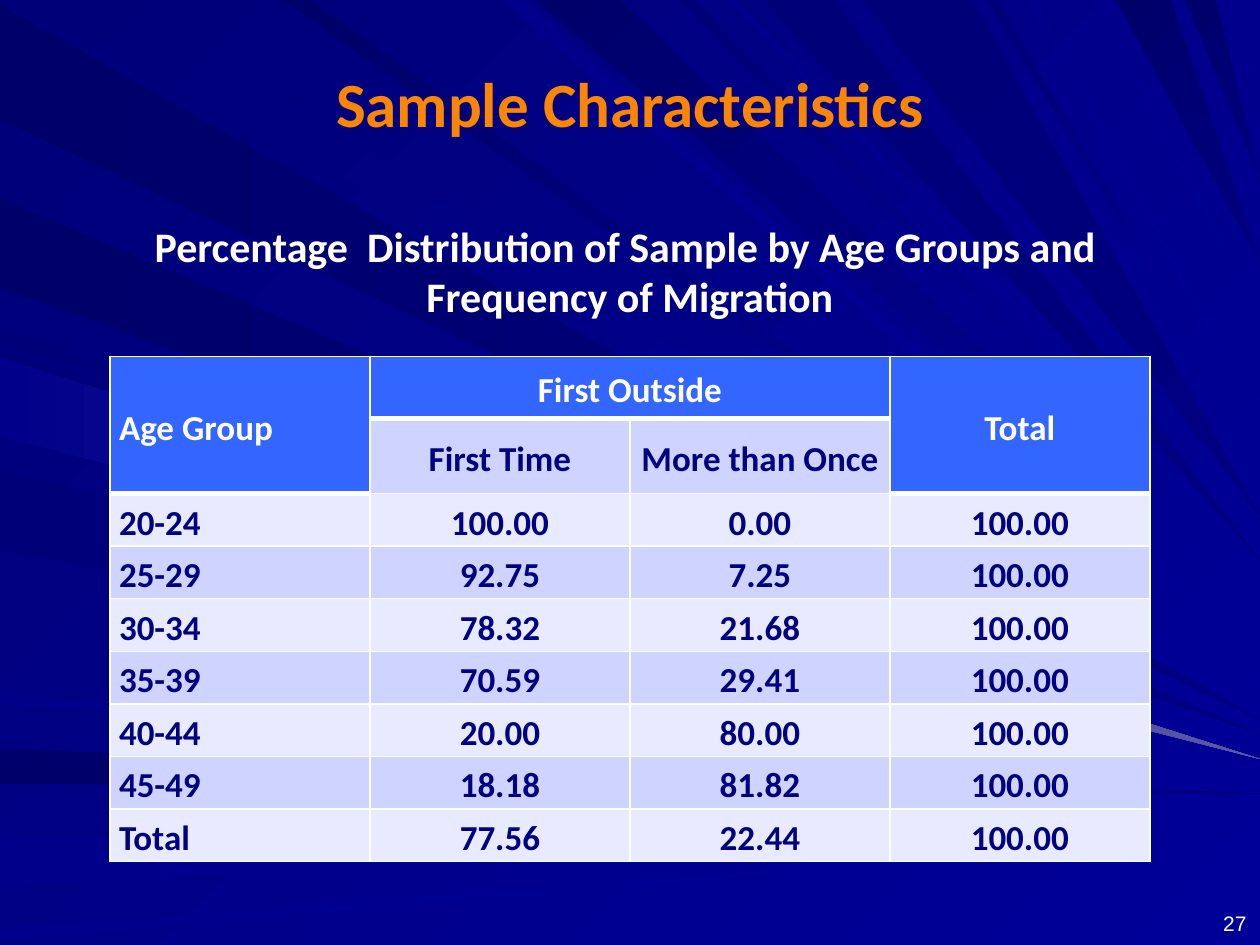
from lxml import etree
from pptx import Presentation
from pptx.dml.color import RGBColor
from pptx.enum import text
from pptx.oxml import ns
from pptx.util import Cm, Pt

NIGHT = RGBColor(0x00, 0x00, 0x6B)
DUSK = RGBColor(0x00, 0x00, 0x78)
DEEP = RGBColor(0x00, 0x00, 0x80)
BLUE = RGBColor(0x00, 0x00, 0x8A)
ROYAL = RGBColor(0x00, 0x00, 0x99)
HAZE = RGBColor(0x5A, 0x5A, 0xA6)
ORANGE = RGBColor(0xFB, 0x86, 0x05)
WHITE = RGBColor(0xFF, 0xFF, 0xFF)
HEADER = RGBColor(0x33, 0x66, 0xFF)
BANDS = [RGBColor(0xE8, 0xEA, 0xFF), RGBColor(0xCE, 0xD3, 0xFF)]

LEFT, CENTER, RIGHT = text.PP_ALIGN.LEFT, text.PP_ALIGN.CENTER, text.PP_ALIGN.RIGHT
MIDDLE, TOP, BOTTOM = text.MSO_ANCHOR.MIDDLE, text.MSO_ANCHOR.TOP, text.MSO_ANCHOR.BOTTOM

WIDTH, HEIGHT = 25.4, 19.05
RAY_UNIT = Cm(0.1)
RAYS_FROM_LEFT = [
    (1, 24, 145, NIGHT, DEEP),
    (151, 158, 160, NIGHT, DEEP),
    (169, 179, 164, BLUE, ROYAL),
    (187, 190, 168, BLUE, ROYAL),
    (66, 69, 149, DUSK, ROYAL),
    (40, 58, 148, NIGHT, DEEP),
    (71, 87, 152, DUSK, ROYAL),
    (95, 111, 154, DUSK, ROYAL),
    (140, 142, 158, BLUE, ROYAL),
    (72, 88, 153, BLUE, HAZE),
]
RAYS_FROM_TOP = [
    (7, 26, 143, DUSK, ROYAL),
    (101, 106, 132, BLUE, ROYAL),
    (108, 125, 125, NIGHT, ROYAL),
    (137, 140, 118, DUSK, ROYAL),
    (154, 168, 113, DUSK, DEEP),
    (225, 236, 53, NIGHT, DEEP),
    (239, 245, 36, NIGHT, DEEP),
    (57, 63, 140, NIGHT, ROYAL),
    (147, 149, 115, BLUE, ROYAL),
    (174, 196, 104, DUSK, DEEP),
    (199, 201, 91, DUSK, ROYAL),
    (207, 209, 85, BLUE, ROYAL),
    (220, 222, 64, BLUE, ROYAL),
]

TITLE_FONT = {"name": "Calibri", "size": Pt(36), "bold": True}
SUBTITLE_FONT = {"name": "Calibri", "size": Pt(24), "bold": True}
TABLE_FONT = {"name": "Calibri", "size": Pt(20), "bold": True}
NUMBER_FONT = {"name": "Arial", "size": Pt(12), "bold": False}

TEXTS = [
    (["Sample Characteristics"], (1.27, 0.76, 22.86, 2.62), TITLE_FONT, ORANGE, CENTER, MIDDLE),
    (["27"], (19.46, 17.96, 5.92, 1.02), NUMBER_FONT, WHITE, RIGHT, BOTTOM),
    (["Percentage  Distribution of Sample by Age Groups and ", "Frequency of Migration"],
     (2.11, 4.32, 21.18, 2.31), SUBTITLE_FONT, WHITE, CENTER, TOP),
]

TABLE = [
    ["Age Group", "First Outside", "", "Total"],
    ["", "First Time", "More than Once", ""],
    ["20-24", "100.00", "0.00", "100.00"],
    ["25-29", "92.75", "7.25", "100.00"],
    ["30-34", "78.32", "21.68", "100.00"],
    ["35-39", "70.59", "29.41", "100.00"],
    ["40-44", "20.00", "80.00", "100.00"],
    ["45-49", "18.18", "81.82", "100.00"],
    ["Total", "77.56", "22.44", "100.00"],
]
MERGES = [((0, 0), (1, 0)), ((0, 1), (0, 2)), ((0, 3), (1, 3))]
THICK_BOTTOMS = {(1, 0), (0, 1), (0, 2), (1, 3)}
HEADER_CELLS = THICK_BOTTOMS | {(0, 0), (0, 3)}
ROW_HEIGHTS = [1.24, 1.52] + [1.06] * 7
COLUMN_WIDTH = 5.24


def apply(target, **values):
    for name, value in values.items():
        setattr(target, name, value)


def paint_gradient(fill, start, end, angle):
    fill.gradient()
    fill.gradient_angle = -angle % 360
    for stop, color in zip(fill.gradient_stops, (start, end)):
        stop.color.rgb = color


def write(paragraph, words, font, color, alignment):
    paragraph.text = words
    paragraph.alignment = alignment
    apply(paragraph.font, **font)
    paragraph.font.color.rgb = color


def add_ray(slide, base, tip_height, start, end, angle):
    builder = slide.shapes.build_freeform(*base[0], scale=RAY_UNIT)
    builder.add_line_segments([base[1], (WIDTH * 10, tip_height)], close=True)
    shape = builder.convert_to_shape()
    shape.shadow.inherit = False
    shape.line.fill.background()
    paint_gradient(shape.fill, start, end, angle)


def add_text(slide, lines, place, font, color, alignment, anchor):
    frame = slide.shapes.add_textbox(*map(Cm, place)).text_frame
    apply(frame, word_wrap=True, vertical_anchor=anchor)
    for index, words in enumerate(lines):
        paragraph = frame.add_paragraph() if index else frame.paragraphs[0]
        write(paragraph, words, font, color, alignment)


def add_borders(cell, widths):
    properties = cell._tc.get_or_add_tcPr()
    for index, (side, width) in enumerate(widths.items()):
        line = etree.Element(ns.qn(f"a:ln{side}"), w=str(Pt(width)))
        fill = etree.SubElement(line, ns.qn("a:solidFill"))
        etree.SubElement(fill, ns.qn("a:srgbClr"), val=str(WHITE))
        properties.insert(index, line)


def add_table(slide):
    rows, columns = len(TABLE), len(TABLE[0])
    table = slide.shapes.add_table(rows, columns, Cm(2.22), Cm(7.19),
                                   Cm(COLUMN_WIDTH * columns), Cm(sum(ROW_HEIGHTS))).table
    for column in table.columns:
        column.width = Cm(COLUMN_WIDTH)
    for row, height in zip(table.rows, ROW_HEIGHTS):
        row.height = Cm(height)
    for first, last in MERGES:
        table.cell(*first).merge(table.cell(*last))
    for r, values in enumerate(TABLE):
        for c, words in enumerate(values):
            cell = table.cell(r, c)
            header = (r, c) in HEADER_CELLS
            apply(cell, vertical_anchor=MIDDLE, margin_left=Cm(0.18), margin_right=Cm(0.18),
                  margin_top=0, margin_bottom=0)
            cell.fill.solid()
            cell.fill.fore_color.rgb = HEADER if header else BANDS[r % 2]
            add_borders(cell, {"L": 1, "R": 1,
                               "T": 3 if (r - 1, c) in THICK_BOTTOMS else 1,
                               "B": 3 if (r, c) in THICK_BOTTOMS else 1})
            if words:
                paragraph = cell.text_frame.paragraphs[0]
                write(paragraph, words, TABLE_FONT, WHITE if header else DEEP, CENTER if c else LEFT)
                paragraph.line_spacing = 1.15


def main():
    presentation = Presentation()
    apply(presentation, slide_width=Cm(WIDTH), slide_height=Cm(HEIGHT))
    slide = presentation.slides.add_slide(presentation.slide_layouts[6])
    paint_gradient(slide.background.fill, DUSK, ROYAL, 45)
    for upper, lower, tip_height, start, end in RAYS_FROM_LEFT:
        add_ray(slide, [(0, upper), (0, lower)], tip_height, start, end, 0)
    for near, far, tip_height, start, end in RAYS_FROM_TOP:
        add_ray(slide, [(near, 0), (far, 0)], tip_height, start, end, 45)
    add_table(slide)
    for block in TEXTS:
        add_text(slide, *block)
    presentation.save("out.pptx")


if __name__ == "__main__":
    main()
